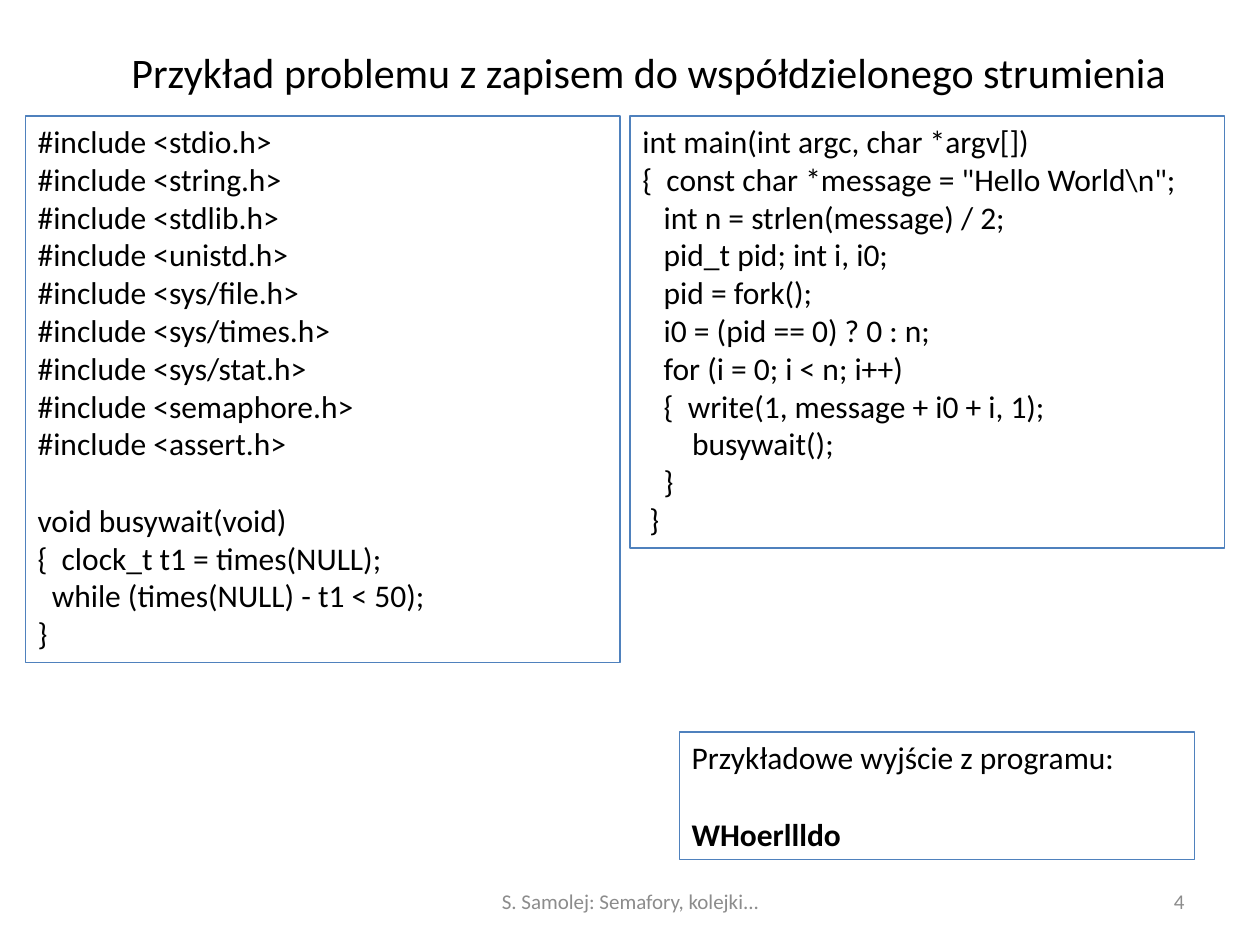
from pptx import Presentation
from pptx.dml.color import RGBColor
from pptx.enum.text import MSO_ANCHOR, MSO_AUTO_SIZE, PP_ALIGN
from pptx.util import Inches, Pt

LEFT, CENTER, RIGHT = PP_ALIGN.LEFT, PP_ALIGN.CENTER, PP_ALIGN.RIGHT
MIDDLE = MSO_ANCHOR.MIDDLE
GROW = MSO_AUTO_SIZE.SHAPE_TO_FIT_TEXT

BLACK = RGBColor(0x00, 0x00, 0x00)
GRAY = RGBColor(0x8C, 0x8C, 0x8C)
BLUE = RGBColor(0x4F, 0x81, 0xBD)

HEADERS = ["stdio", "string", "stdlib", "unistd", "sys/file",
           "sys/times", "sys/stat", "semaphore", "assert"]

BUSYWAIT = """void busywait(void)
{  clock_t t1 = times(NULL);
  while (times(NULL) - t1 < 50);
}"""

MAIN = r"""int main(int argc, char *argv[])
{  const char *message = "Hello World\n";
   int n = strlen(message) / 2;
   pid_t pid; int i, i0;
   pid = fork();
   i0 = (pid == 0) ? 0 : n;
   for (i = 0; i < n; i++)
   {  write(1, message + i0 + i, 1);
       busywait();
   }
 }"""


class SlideBuilder:
    font = "Calibri"
    title_size, body_size, footer_size = Pt(24), Pt(18), Pt(12)
    line_gap = Pt(22)  # one line of body text

    def __init__(self, prs):
        self.s = prs.slides.add_slide(prs.slide_layouts[5])  # title only

    def style(self, p, size, color=BLACK, align=LEFT):
        p.alignment = align
        p.font.name = self.font
        p.font.size = size
        p.font.color.rgb = color

    def title(self, text, x, y, w, h):
        sp = self.s.shapes.title
        sp.left, sp.top, sp.width, sp.height = map(Inches, (x, y, w, h))
        tf = sp.text_frame
        tf.text = text
        tf.vertical_anchor = MIDDLE
        self.style(tf.paragraphs[0], self.title_size, align=CENTER)

    def textbox(self, x, y, w, h):
        sp = self.s.shapes.add_textbox(*map(Inches, (x, y, w, h)))
        sp.text_frame.word_wrap = True
        return sp

    def frame(self, blocks, x, y, w, h):
        """Outlined box; blocks of lines are set apart by one line."""
        sp = self.textbox(x, y, w, h)
        sp.line.color.rgb = BLUE
        sp.line.width = Pt(0.75)
        tf = sp.text_frame
        tf.auto_size = GROW
        tf.text = "\n".join(line for block in blocks for line in block)
        for p in tf.paragraphs:
            self.style(p, self.body_size)
        start = 0
        for block in blocks[:-1]:
            start += len(block)
            tf.paragraphs[start].space_before = self.line_gap
        return tf

    def footer(self, text, x, w, align):
        tf = self.textbox(x, 6.95, w, 0.4).text_frame
        tf.text = text
        tf.vertical_anchor = MIDDLE
        self.style(tf.paragraphs[0], self.footer_size, GRAY, align)


def main():
    prs = Presentation()
    prs.slide_width, prs.slide_height = Inches(10), Inches(7.5)
    b = SlideBuilder(prs)

    b.title("Przykład problemu z zapisem do współdzielonego strumienia",
            0.5, 0.3, 9.3, 0.54)

    # Program code in two columns
    includes = [f"#include <{name}.h>" for name in HEADERS]
    b.frame([includes, BUSYWAIT.split("\n")], 0.2, 0.92, 4.72, 4.34)
    b.frame([MAIN.split("\n")], 5, 0.92, 4.72, 3.43)

    # Sample output
    tf = b.frame([["Przykładowe wyjście z programu:"], ["WHoerllldo"]],
                 5.39, 5.81, 4.09, 1.01)
    tf.paragraphs[-1].font.bold = True

    # Footer and slide number
    b.footer("S. Samolej: Semafory, kolejki...", 3.42, 3.17, CENTER)
    b.footer("4", 7.17, 2.33, RIGHT)

    prs.save("out.pptx")


if __name__ == "__main__":
    main()
